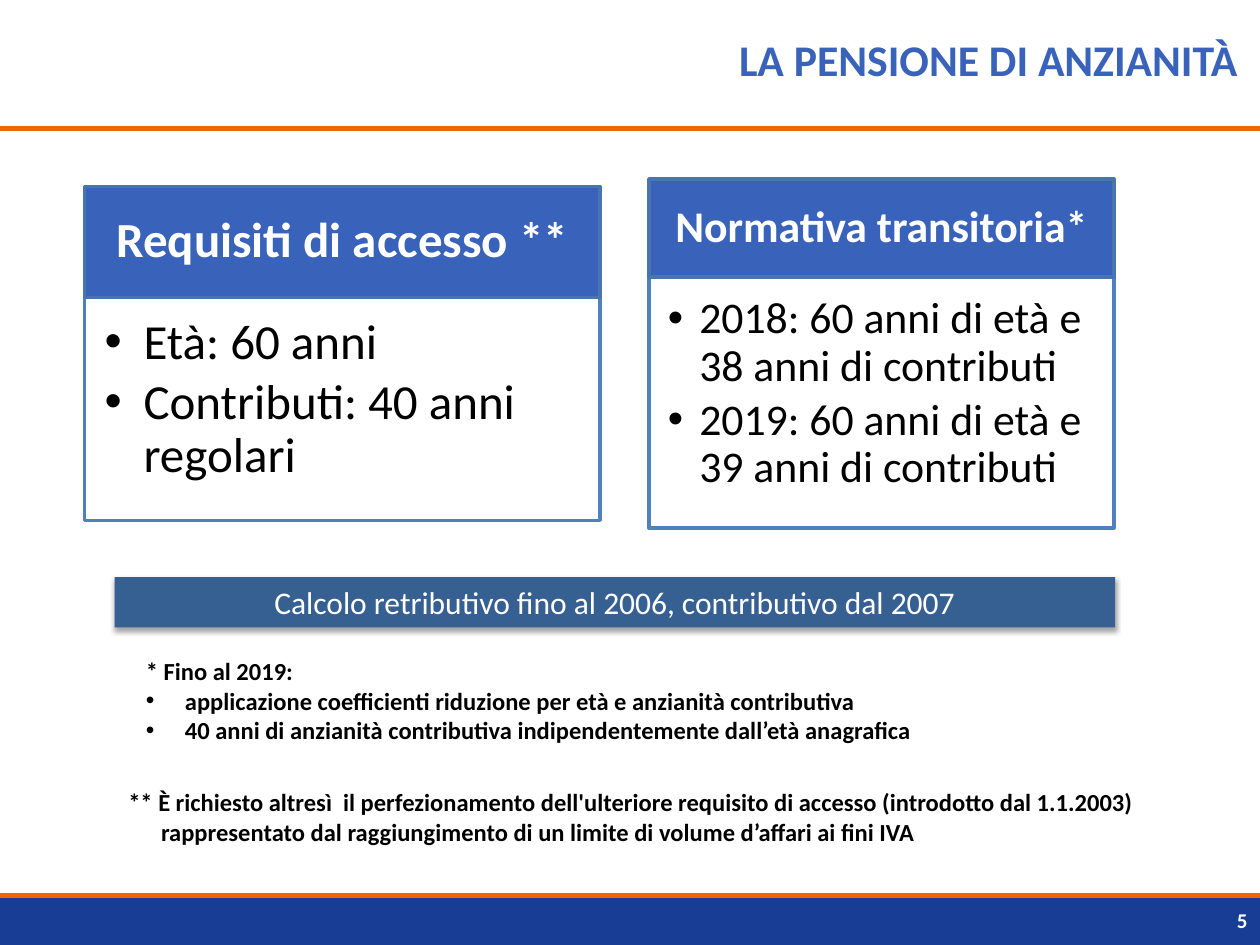
"""Build the slide on the seniority pension with its two requirement cards."""
from dataclasses import dataclass

import pptx
import pptx.dml.color
import pptx.enum.shapes
import pptx.enum.text
import pptx.oxml
import pptx.oxml.ns
import pptx.util
from lxml import etree

RGBColor = pptx.dml.color.RGBColor
Align = pptx.enum.text.PP_ALIGN
Anchor = pptx.enum.text.MSO_ANCHOR

PX = 9144
WIDTH, HEIGHT = 1000, 750
FONT = "Calibri"
WHITE = RGBColor(0xFF, 0xFF, 0xFF)
BLACK = RGBColor(0x00, 0x00, 0x00)
ORANGE = RGBColor(0xEC, 0x67, 0x01)
NAVY = RGBColor(0x18, 0x3D, 0x95)
BLUE = RGBColor(0x39, 0x62, 0xBA)
HEADER_EDGE = RGBColor(0x48, 0x75, 0xAC)
BODY_EDGE = RGBColor(0x4F, 0x81, 0xBD)
STEEL = RGBColor(0x37, 0x60, 0x92)


@dataclass(frozen=True)
class Area:
    left: int
    top: int
    width: int
    height: int


@dataclass(frozen=True)
class Style:
    size: int
    color: RGBColor
    bold: bool = False
    align: Align = Align.LEFT


@dataclass(frozen=True)
class Line:
    text: str
    indent: int = 0
    bullet: bool = False


@dataclass(frozen=True)
class Card:
    header: Area
    body_height: int
    size: int
    indent: int
    insets: tuple[int, int, int, int]
    title: str
    items: tuple[str, ...]


CARDS = (
    Card(Area(67, 148, 409, 88), 177, 28, 31, (16, 16, 22, 24),
         "Requisiti di accesso **",
         ("Età: 60 anni", "Contributi: 40 anni regolari")),
    Card(Area(515, 142, 369, 78), 199, 25, 25, (15, 15, 19, 22),
         "Normativa transitoria*",
         ("2018: 60 anni di età e 38 anni di contributi",
          "2019: 60 anni di età e 39 anni di contributi")),
)
TRANSITION_NOTE = (
    Line("* Fino al 2019:"),
    Line("applicazione coefficienti riduzione per età e anzianità contributiva", 31, True),
    Line("40 anni di anzianità contributiva indipendentemente dall’età anagrafica", 31, True),
)
ACCESS_NOTE = (
    Line("** È richiesto altresì  il perfezionamento dell'ulteriore requisito di "
         "accesso (introdotto dal 1.1.2003)"),
    Line("rappresentato dal raggiungimento di un limite di volume d’affari ai fini IVA", 26),
)


def bounds(area: Area) -> tuple[int, int, int, int]:
    """Return the area in EMU."""
    return area.left * PX, area.top * PX, area.width * PX, area.height * PX


def place(shape, area: Area) -> None:
    """Move and size a shape."""
    shape.left, shape.top, shape.width, shape.height = bounds(area)


def write(box, lines: tuple[Line, ...], style: Style, anchor=Anchor.TOP,
          insets=(10, 5, 10, 5), spacing: float = 1.0, after: int = 0) -> None:
    """Write formatted paragraphs into a box."""
    frame = box.text_frame
    frame.word_wrap = True
    frame.auto_size = pptx.enum.text.MSO_AUTO_SIZE.NONE
    frame.vertical_anchor = anchor
    (frame.margin_left, frame.margin_top,
     frame.margin_right, frame.margin_bottom) = [inset * PX for inset in insets]
    for index, line in enumerate(lines):
        para = frame.add_paragraph() if index else frame.paragraphs[0]
        properties = para._p.get_or_add_pPr()
        properties.set("marL", str(line.indent * PX))
        properties.set("indent", str(-line.indent * PX if line.bullet else 0))
        if line.bullet:
            etree.SubElement(properties, pptx.oxml.ns.qn("a:buFont"), typeface="Arial")
            etree.SubElement(properties, pptx.oxml.ns.qn("a:buChar"), char="•")
        para.alignment = style.align
        para.line_spacing = spacing
        para.space_before = pptx.util.Pt(0)
        para.space_after = pptx.util.Pt(after)
        span = para.add_run()
        span.text = line.text
        span.font.name = FONT
        span.font.size = pptx.util.Pt(style.size)
        span.font.bold = style.bold
        span.font.color.rgb = style.color


def add_block(page, area: Area, fill: RGBColor, edge: RGBColor | None = None):
    """Add a filled rectangle."""
    block = page.shapes.add_shape(pptx.enum.shapes.MSO_SHAPE.RECTANGLE, *bounds(area))
    block.shadow.inherit = False
    paint(block, fill, edge)
    return block


def paint(shape, fill: RGBColor, edge: RGBColor | None) -> None:
    """Set the fill and outline of a shape."""
    shape.fill.solid()
    shape.fill.fore_color.rgb = fill
    if edge is None:
        shape.line.fill.background()
    else:
        shape.line.color.rgb = edge
        shape.line.width = pptx.util.Pt(2)


def add_rule(page, top: int) -> None:
    """Add a full-width orange rule."""
    rule = page.shapes.add_connector(
        pptx.enum.shapes.MSO_CONNECTOR.STRAIGHT, 0, top * PX, WIDTH * PX, top * PX)
    rule.line.color.rgb = ORANGE
    rule.line.width = pptx.util.Pt(3)
    etree.SubElement(rule._element.spPr, pptx.oxml.ns.qn("a:effectLst"))


def add_text(page, area: Area, lines: tuple[Line, ...], style: Style,
             anchor=Anchor.TOP) -> None:
    """Add a text box."""
    write(page.shapes.add_textbox(*bounds(area)), lines, style, anchor)


def add_card(page, card: Card, body) -> None:
    """Draw a card header and turn a body placeholder into its list."""
    head = card.header
    place(body, Area(head.left, head.top + head.height, head.width, card.body_height))
    paint(body, WHITE, BODY_EDGE)
    items = tuple(Line(item, card.indent, True) for item in card.items)
    write(body, items, Style(card.size, BLACK), insets=card.insets, spacing=0.9, after=4)
    header = add_block(page, head, BLUE, HEADER_EDGE)
    write(header, (Line(card.title),), Style(card.size, WHITE, True, Align.CENTER),
          Anchor.MIDDLE, spacing=0.9)


def add_shadow(shape) -> None:
    """Give a shape a soft shadow below it."""
    effects = shape._element.spPr.find(pptx.oxml.ns.qn("a:effectLst"))
    effects.append(pptx.oxml.parse_xml(
        f'<a:outerShdw {pptx.oxml.ns.nsdecls("a")} blurRad="{pptx.util.Pt(3.1)}" '
        f'dist="{pptx.util.Pt(1.8)}" dir="5400000" rotWithShape="0">'
        '<a:srgbClr val="000000"><a:alpha val="35000"/></a:srgbClr></a:outerShdw>'))


def main() -> None:
    """Build and save the deck."""
    deck = pptx.Presentation()
    deck.slide_width, deck.slide_height = WIDTH * PX, HEIGHT * PX
    page = deck.slides.add_slide(deck.slide_layouts.get_by_name("Two Content"))
    title, *bodies = page.placeholders
    add_block(page, Area(0, 711, WIDTH, 39), NAVY)
    for top in (711, 102):
        add_rule(page, top)
    place(title, Area(125, 0, 867, 94))
    write(title, (Line("LA PENSIONE DI ANZIANITÀ"),),
          Style(25, BLUE, True, Align.RIGHT), Anchor.MIDDLE)
    for card, body in zip(CARDS, bodies):
        add_card(page, card, body)
    banner = add_block(page, Area(91, 458, 794, 40), STEEL)
    add_shadow(banner)
    write(banner, (Line("Calcolo retributivo fino al 2006, contributivo dal 2007"),),
          Style(18, WHITE, align=Align.CENTER))
    note = Style(14, BLACK, True)
    add_text(page, Area(106, 516, 794, 104), TRANSITION_NOTE, note)
    add_text(page, Area(92, 620, 833, 57), ACCESS_NOTE, note)
    add_text(page, Area(767, 710, 233, 40), (Line("5"),),
             Style(12, WHITE, True, Align.RIGHT), Anchor.MIDDLE)
    deck.save("out.pptx")


if __name__ == "__main__":
    main()
